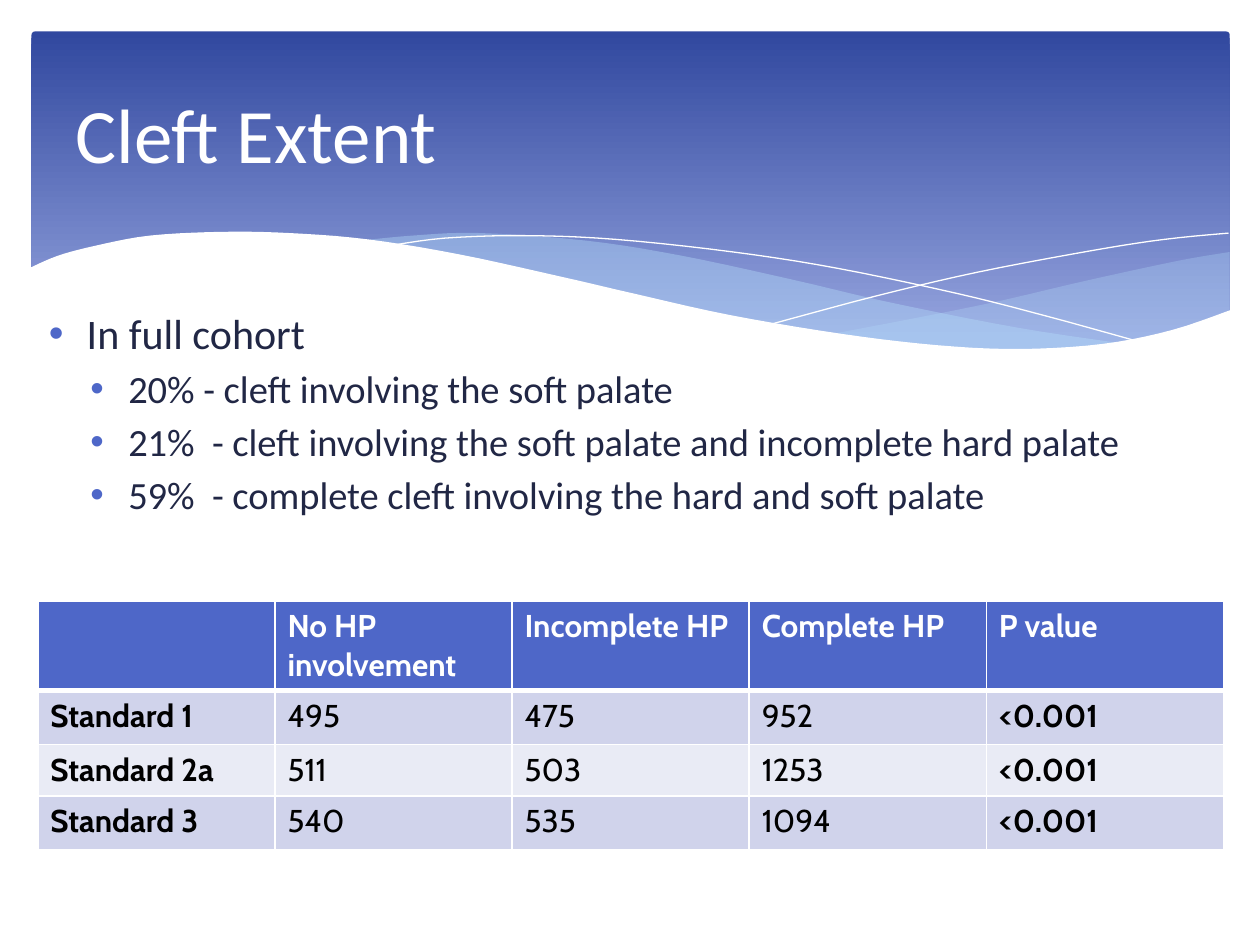
from dataclasses import dataclass

from lxml import etree
from pptx import Presentation, util as u
from pptx.dml import color
from pptx.enum import shapes, text
from pptx.oxml import ns


@dataclass(frozen=True)
class Theme:
    white: str = "FFFFFF"
    accent: str = "4E67C8"
    banner_top: str = "31489F"
    banner_bottom: str = "95A4DE"
    wave: str = "B4DCFA"
    body: str = "212745"
    cell: str = "000000"
    bands: tuple = ("D0D3EB", "E9EBF5")
    text_font: str = "Calibri"
    table_font: str = "Cabin"
    title_size: int = 44
    point_sizes: tuple = (24, 22)
    table_size: int = 18


def rgb(value):
    return color.RGBColor.from_string(value)


def sub(parent, tag, **attributes):
    return etree.SubElement(parent, ns.qn(tag), attributes)


def curve(knots, steps=5):
    """Points of a Catmull-Rom spline through the knots."""
    padded = [knots[0], *knots, knots[-1]]
    points = [knots[0]]
    for a, b, c, d in zip(padded, padded[1:], padded[2:], padded[3:]):
        for step in range(1, steps + 1):
            t = step / steps
            points.append(tuple(
                (2 * q + (r - p) * t + (2 * p - 5 * q + 4 * r - s) * t ** 2
                 + (3 * q - p - 3 * r + s) * t ** 3) / 2
                for p, q, r, s in zip(a, b, c, d)))
    return points


class SlideBuilder:
    def __init__(self, slide, theme):
        self.slide = slide
        self.theme = theme

    def style(self, paragraph, font_name, size, font_color, bold=False):
        for run in paragraph.runs:
            font = run.font
            font.name, font.size, font.bold = font_name, u.Pt(size), bold
            font.color.rgb = rgb(font_color)

    def banner(self, left, top, width, height):
        banner = self.slide.shapes.add_shape(
            shapes.MSO_SHAPE.ROUNDED_RECTANGLE,
            *map(u.Inches, (left, top, width, height)))
        banner.adjustments[0] = 0.01
        banner.shadow.inherit = False
        banner.line.fill.background()
        banner.fill.gradient()
        banner.fill.gradient_angle = 270
        stops = banner.fill.gradient_stops
        stops[0].color.rgb = rgb(self.theme.banner_top)
        stops[1].color.rgb = rgb(self.theme.banner_bottom)
        stops[0].position, stops[1].position = 0, 0.9

    def outline(self, points, closed):
        start, *rest = [(u.Inches(x), u.Inches(y)) for x, y in points]
        builder = self.slide.shapes.build_freeform(*start)
        builder.add_line_segments(rest, close=closed)
        shape = builder.convert_to_shape()
        shape.shadow.inherit = False
        return shape

    def wave(self, points, fill, opacity=100):
        wave = self.outline(points, closed=True)
        wave.line.fill.background()
        wave.fill.solid()
        wave.fill.fore_color.rgb = rgb(fill)
        if opacity < 100:
            tint = wave._element.spPr.find(".//" + ns.qn("a:srgbClr"))
            sub(tint, "a:alpha", val=str(opacity * 1000))

    def strand(self, points):
        strand = self.outline(points, closed=False)
        strand.fill.background()
        strand.line.color.rgb = rgb(self.theme.white)
        strand.line.width = u.Pt(0)

    def bullets(self, left, top, width, height, points):
        """Add bulleted (level, wording) pairs."""
        box = self.slide.shapes.add_textbox(
            *map(u.Inches, (left, top, width, height)))
        frame = box.text_frame
        frame.word_wrap = True
        frame.text = "\n".join(wording for _, wording in points)
        for index, (paragraph, (level, _)) in enumerate(
                zip(frame.paragraphs, points)):
            paragraph.level = level
            props = paragraph._p.get_or_add_pPr()
            props.set("marL", str(u.Inches((0.3, 0.63)[level])))
            props.set("indent", str(u.Inches(-0.3)))
            sub(sub(props, "a:buClr"), "a:srgbClr", val=self.theme.accent)
            sub(props, "a:buFont", typeface="Arial")
            sub(props, "a:buChar", char="•")
            if index:
                paragraph.space_before = u.Pt(4)
            self.style(paragraph, self.theme.text_font,
                       self.theme.point_sizes[level], self.theme.body)

    def title(self, left, top, width, height, wording):
        title = self.slide.shapes.title
        title.left, title.top, title.width, title.height = map(
            u.Inches, (left, top, width, height))
        frame = title.text_frame
        frame.text = wording
        frame.vertical_anchor = text.MSO_ANCHOR.MIDDLE
        heading = frame.paragraphs[0]
        heading.alignment = text.PP_ALIGN.LEFT
        self.style(heading, self.theme.text_font, self.theme.title_size,
                   self.theme.white)
        # Bring the title in front of the banner.
        self.slide.shapes._spTree.append(title._element)

    def borders(self, cell, header_edge):
        props = cell._tc.get_or_add_tcPr()
        for side in "LRTB":
            width = 3 if side == header_edge else 1
            line = sub(props, "a:ln" + side, w=str(u.Pt(width)))
            sub(sub(line, "a:solidFill"), "a:srgbClr", val=self.theme.white)

    def table(self, left, top, width, row_heights, rows):
        table = self.slide.shapes.add_table(
            len(rows), len(rows[0]), u.Inches(left), u.Inches(top),
            u.Inches(width), u.Inches(sum(row_heights))).table
        for row, height in zip(table.rows, row_heights):
            row.height = u.Inches(height)
        for r, row in enumerate(rows):
            for c, wording in enumerate(row):
                cell = table.cell(r, c)
                self.borders(cell, {0: "B", 1: "T"}.get(r))
                cell.fill.solid()
                cell.fill.fore_color.rgb = rgb(
                    self.theme.bands[(r - 1) % 2] if r else self.theme.accent)
                cell.text = wording
                self.style(cell.text_frame.paragraphs[0],
                           self.theme.table_font, self.theme.table_size,
                           self.theme.cell if r else self.theme.white,
                           bold=r == 0 or c in (0, len(row) - 1))


RIGHT_WAVE = (
    curve([(9.76, 2), (9.35, 2.07), (8.61, 2.23), (7.79, 2.42), (6.61, 2.65)])
    + curve([(6.61, 2.65), (7.19, 2.72), (8.03, 2.78), (8.81, 2.73),
             (9.35, 2.62), (9.76, 2.47)]))
MIDDLE_WAVE = (
    curve([(8.93, 2.73), (8.07, 2.6), (7.06, 2.4), (6.29, 2.22), (5.41, 2.03),
           (4.65, 1.91), (3.8, 1.85), (3.28, 1.87), (2.86, 1.91)])
    + curve([(2.86, 1.91), (3.62, 2.03), (4.49, 2.22), (5.66, 2.48),
             (6.5, 2.64), (7.22, 2.74), (7.96, 2.78), (8.48, 2.77),
             (8.93, 2.73)]))
WHITE_WAVE = curve(
    [(9.77, 2.46), (9.3, 2.62), (8.75, 2.73), (8.09, 2.77), (7.44, 2.74),
     (6.68, 2.65), (5.79, 2.5), (5.03, 2.33), (4.47, 2.2), (3.65, 2.02),
     (2.92, 1.9), (2.3, 1.85), (1.77, 1.84), (1.19, 1.87), (0.76, 1.95),
     (0.46, 2.03), (0.23, 2.13)]) + [(0.23, 3.29), (9.77, 3.29)]
FALLING_STRAND = curve(
    [(3.09, 1.95), (3.53, 1.89), (4.16, 1.87), (4.89, 1.9), (5.82, 2),
     (6.65, 2.13), (7.6, 2.33), (8.31, 2.51), (9.07, 2.72)])
RISING_STRAND = curve(
    [(6.13, 2.57), (6.95, 2.35), (7.76, 2.16), (8.66, 1.99), (9.24, 1.9),
     (9.75, 1.85)])


def main():
    deck = Presentation()
    deck.slide_width, deck.slide_height = u.Inches(10), u.Inches(7.5)
    theme = Theme()
    page = SlideBuilder(deck.slides.add_slide(deck.slide_layouts[5]), theme)

    page.banner(0.25, 0.25, 9.51, 2.7)
    page.wave(RIGHT_WAVE, theme.wave, opacity=29)
    page.wave(MIDDLE_WAVE, theme.wave, opacity=40)
    page.strand(FALLING_STRAND)
    page.strand(RISING_STRAND)
    page.wave(WHITE_WAVE, theme.white)

    page.bullets(0.29, 2.39, 9.43, 2.18, [
        (0, "In full cohort"),
        (1, "20% - cleft involving the soft palate"),
        (1, "21%  - cleft involving the soft palate and incomplete hard palate"),
        (1, "59%  - complete cleft involving the hard and soft palate"),
    ])
    page.title(0.5, 0.37, 9, 1.37, "Cleft Extent")
    page.table(0.3, 4.77, 9.41, (0.66, 0.43, 0.39, 0.43), [
        ("", "No HP involvement", "Incomplete HP", "Complete HP", "P value"),
        ("Standard 1", "495", "475", "952", "<0.001"),
        ("Standard 2a", "511", "503", "1253", "<0.001"),
        ("Standard 3", "540", "535", "1094", "<0.001"),
    ])
    deck.save("out.pptx")


if __name__ == "__main__":
    main()
